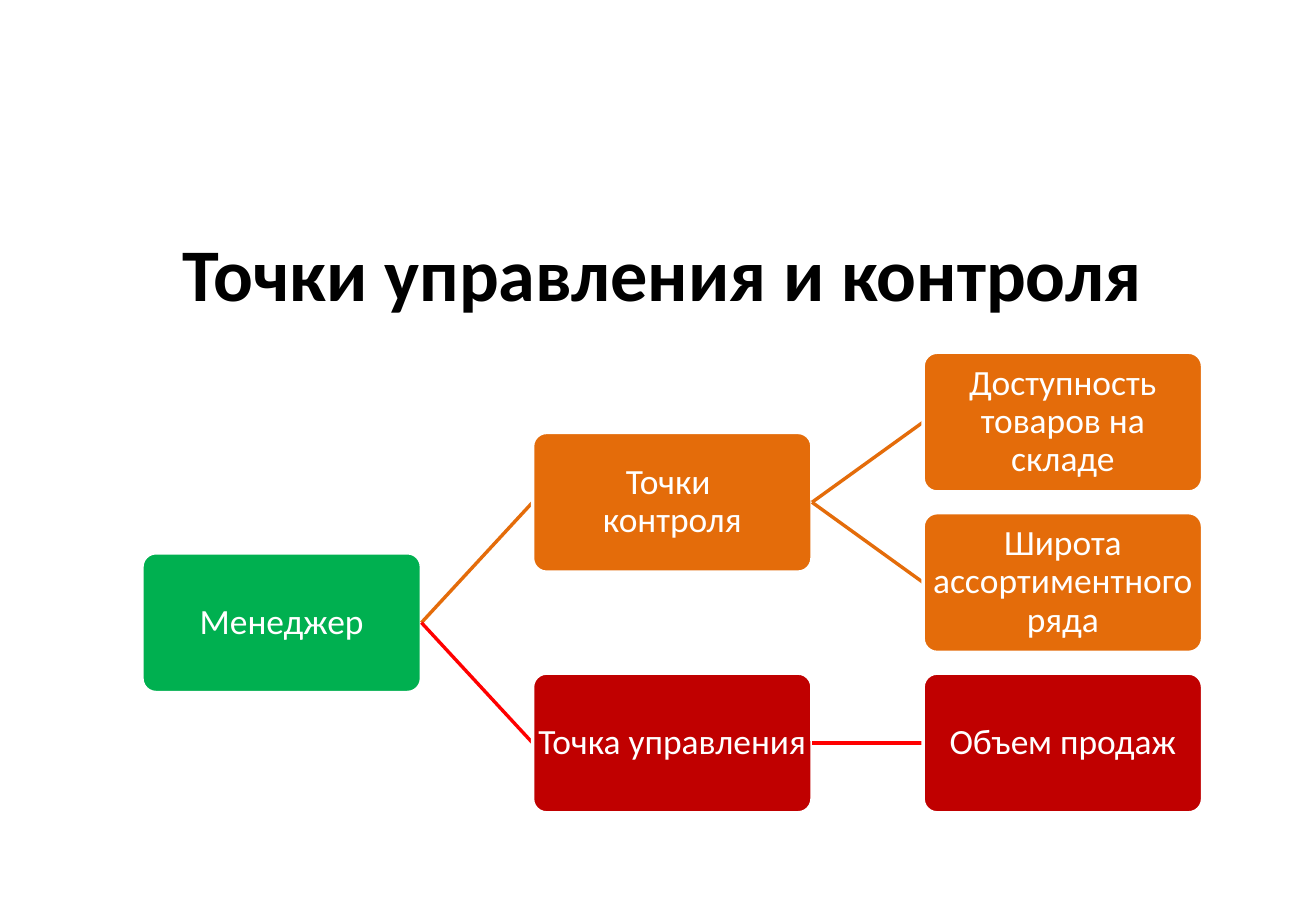
from lxml.etree import SubElement
from pptx import Presentation
from pptx.dml.color import RGBColor
from pptx.enum.shapes import MSO_CONNECTOR, MSO_SHAPE
from pptx.enum.text import MSO_ANCHOR, PP_ALIGN
from pptx.oxml.ns import qn
from pptx.util import Pt

BLACK = RGBColor(0x00, 0x00, 0x00)
WHITE = RGBColor(0xFF, 0xFF, 0xFF)
GREEN = RGBColor(0x00, 0xB0, 0x50)
ORANGE = RGBColor(0xE4, 0x6C, 0x0A)
RED = RGBColor(0xFF, 0x00, 0x00)
DARK_RED = RGBColor(0xC0, 0x00, 0x00)

TREE_LEFT, TREE_TOP = 84.2, 208.8
COLUMN_STEP, ROW_STEP = 231.5, 95.1
BOX_WIDTH, BOX_HEIGHT = 165.6, 82.8
LEFT_SIDE, RIGHT_SIDE = 1, 3


class TreeSlide:
    font_name = "Calibri"
    line_width = Pt(2)

    def __init__(self, deck):
        self.slide = deck.slides.add_slide(deck.slide_layouts[5])
        self.shapes = self.slide.shapes

    def format_text(self, frame, text, size, color, bold=False):
        frame.word_wrap = True
        frame.vertical_anchor = MSO_ANCHOR.MIDDLE
        para = frame.paragraphs[0]
        para.text = text
        para.alignment = PP_ALIGN.CENTER
        font = para.font
        font.name, font.size, font.bold = self.font_name, Pt(size), bold
        font.color.rgb = color
        return para

    def title(self, text):
        title = self.shapes.title
        title.left, title.top = Pt(24), Pt(126)
        title.width, title.height = Pt(738), Pt(70.5)
        self.format_text(title.text_frame, text, 44, BLACK, bold=True)

    def box(self, text, column, row, fill):
        """Add a box at a tree position; a fractional row lies between rows."""
        box = self.shapes.add_shape(
            MSO_SHAPE.ROUNDED_RECTANGLE,
            Pt(TREE_LEFT + column * COLUMN_STEP), Pt(TREE_TOP + row * ROW_STEP),
            Pt(BOX_WIDTH), Pt(BOX_HEIGHT))
        box.adjustments[0] = 0.1
        box.shadow.inherit = False
        box.fill.solid()
        box.fill.fore_color.rgb = fill
        box.line.color.rgb = WHITE
        box.line.width = self.line_width
        frame = box.text_frame
        frame.margin_left = frame.margin_right = Pt(0)
        frame.margin_top = frame.margin_bottom = Pt(1)
        para = self.format_text(frame, text, 21, WHITE)
        para.line_spacing = 0.9
        return box

    def branch(self, parent, child, color):
        """Join two boxes with a line that lies under the child box."""
        line = self.shapes.add_connector(MSO_CONNECTOR.STRAIGHT, 0, 0, 0, 0)
        line.begin_connect(parent, RIGHT_SIDE)
        line.end_connect(child, LEFT_SIDE)
        line.line.color.rgb = color
        line.line.width = self.line_width
        SubElement(line.element.spPr, qn("a:effectLst"))
        child.element.addprevious(line.element)


def main():
    deck = Presentation()
    deck.slide_width, deck.slide_height = Pt(780), Pt(540)
    page = TreeSlide(deck)
    page.title("Точки управления и контроля")

    manager = page.box("Менеджер", 0, 1.25, GREEN)
    control = page.box("Точки \nконтроля", 1, 0.5, ORANGE)
    stock = page.box("Доступность товаров на складе", 2, 0, ORANGE)
    variety = page.box("Широта ассортиментного ряда", 2, 1, ORANGE)
    management = page.box("Точка управления", 1, 2, DARK_RED)
    sales = page.box("Объем продаж", 2, 2, DARK_RED)

    for parent, child, color in (
        (manager, control, ORANGE),
        (control, stock, ORANGE),
        (control, variety, ORANGE),
        (manager, management, RED),
        (management, sales, RED),
    ):
        page.branch(parent, child, color)
    deck.save("out.pptx")


if __name__ == "__main__":
    main()
